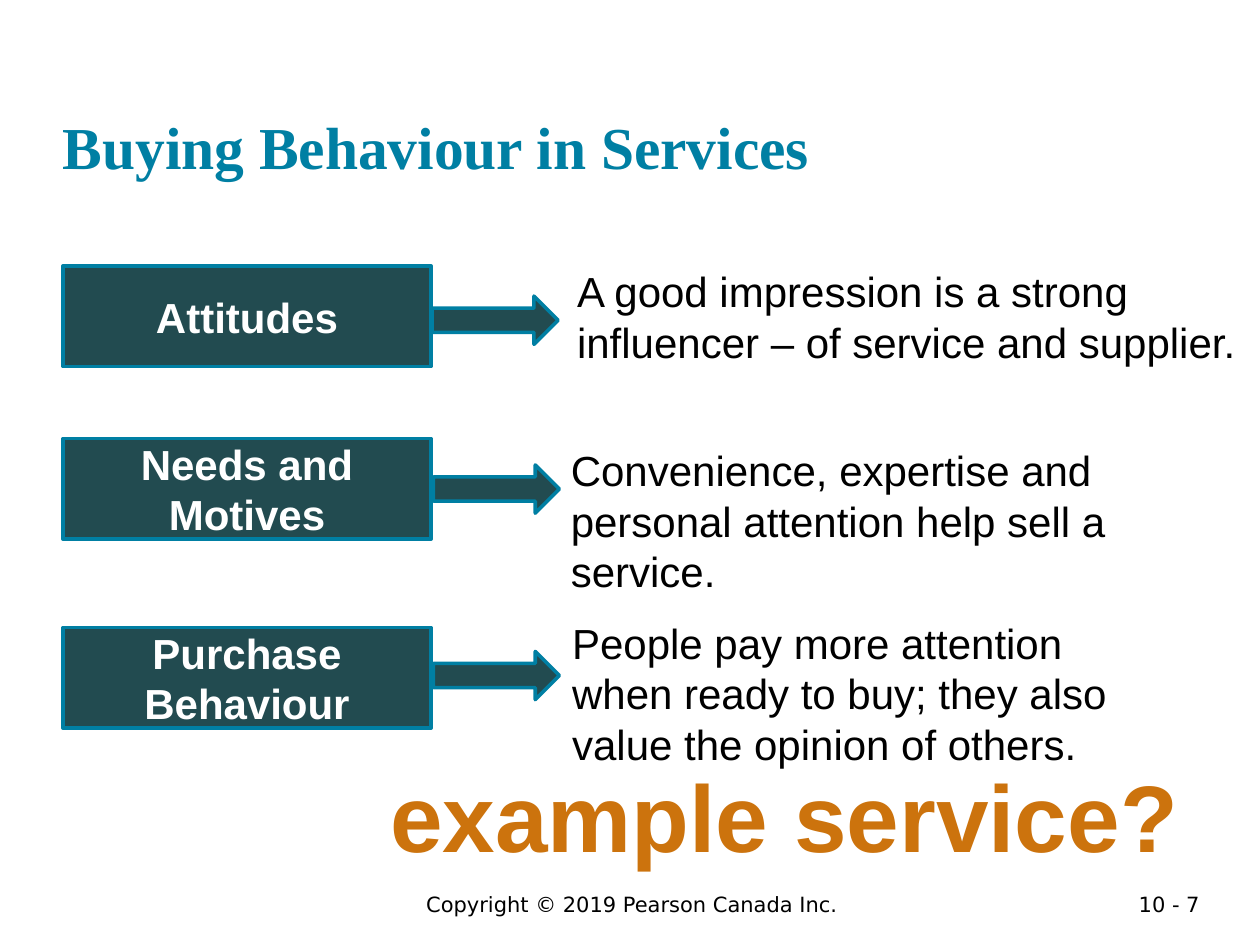
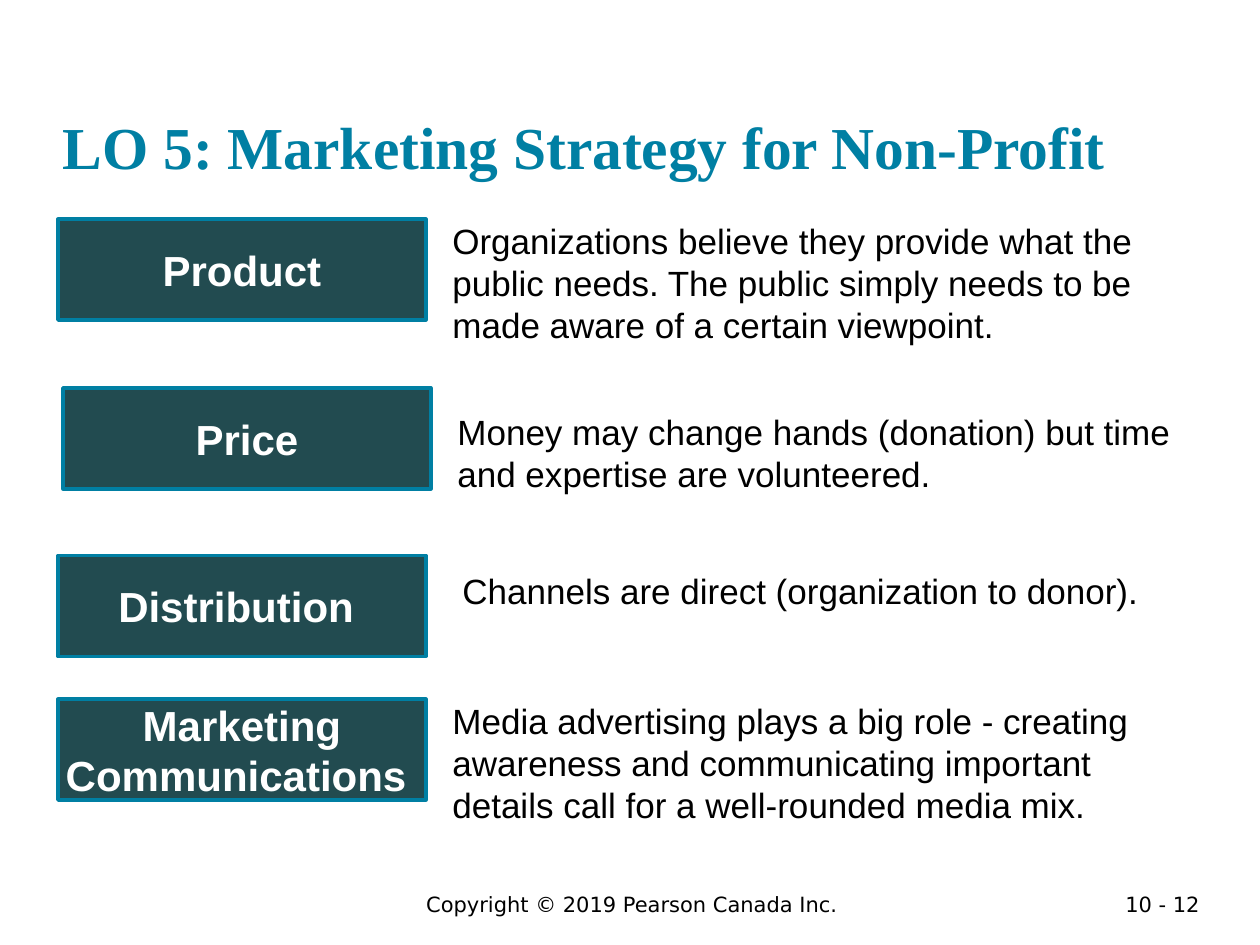
from pptx import Presentation
from pptx.dml.color import RGBColor
from pptx.enum.shapes import MSO_SHAPE
from pptx.enum.text import MSO_ANCHOR, PP_ALIGN
from pptx.util import Pt

COLOURS = {
    "title": "007FA3",
    "box": "224B50",
    "outline": "007FA3",
    "label": "FFFFFF",
    "body": "000000",
    "question": "CC730D",
}
LABEL_WIDTH, LABEL_HEIGHT = 210.24, 57.6
ARROW_WIDTH, ARROW_HEIGHT = 72, 27.6
COPYRIGHT = "Copyright © 2019 Pearson Canada Inc."

BUYING_FACTORS = [
    ("Attitudes", 151.92, (246.96, 169.2),
     "A good impression is a strong influencer – of service and supplier.",
     (329.76, 151.92, 390.24, 77.76)),
    ("Needs and\nMotives", 250.56, (247.68, 265.68),
     "Convenience, expertise and personal attention help sell a service.",
     (326.16, 254.16, 375.84, 57.6)),
    ("Purchase\nBehaviour", 358.56, (247.68, 372.24),
     "People pay more attention when ready to buy; they also value the opinion of others.",
     (326.88, 352.8, 329.76, 81.36)),
]
STRATEGY_ELEMENTS = [
    ("Product", (33.12, 125.28),
     "Organizations believe they provide what the public needs. "
     "The public simply needs to be made aware of a certain viewpoint.",
     (258.48, 125.28, 426.24, 95.76)),
    ("Price", (36, 221.76),
     "Money may change hands (donation) but time and expertise are volunteered.",
     (261.36, 234.72, 425.52, 57.6)),
    ("Distribution ", (33.12, 317.52),
     "Channels are direct (organization to donor).",
     (264.24, 325.44, 419.76, 41.76)),
    ("Marketing\nCommunications ", (33.12, 399.6),
     "Media advertising plays a big role - creating awareness and "
     "communicating important details call for a well-rounded media mix.",
     (258.48, 399.6, 414, 87.84)),
]


def colour(name):
    return RGBColor.from_string(COLOURS[name])


def write(frame, text, size, ink="body", font="Arial", bold=False,
          align=PP_ALIGN.LEFT, anchor=MSO_ANCHOR.TOP, inset=True):
    frame.word_wrap = True
    frame.vertical_anchor = anchor
    if not inset:
        frame.margin_left = frame.margin_right = 0
        frame.margin_top = frame.margin_bottom = 0
    frame.text = text
    for paragraph in frame.paragraphs:
        paragraph.alignment = align
        for run in paragraph.runs:
            run.font.name = font
            run.font.size = Pt(size)
            run.font.bold = bold
            run.font.color.rgb = colour(ink)


def add_text(slide, area, text, size, **style):
    box = slide.shapes.add_textbox(*map(Pt, area))
    write(box.text_frame, text, size, **style)


def add_block(slide, kind, area):
    block = slide.shapes.add_shape(kind, *map(Pt, area))
    block.shadow.inherit = False
    block.fill.solid()
    block.fill.fore_color.rgb = colour("box")
    block.line.color.rgb = colour("outline")
    block.line.width = Pt(2)
    return block


def add_label(slide, left, top, text):
    block = add_block(slide, MSO_SHAPE.RECTANGLE, (left, top, LABEL_WIDTH, LABEL_HEIGHT))
    write(block.text_frame, text, 24, ink="label", bold=True, align=PP_ALIGN.CENTER,
          anchor=MSO_ANCHOR.MIDDLE, inset=False)


def add_arrow(slide, left, top):
    add_block(slide, MSO_SHAPE.RIGHT_ARROW, (left, top, ARROW_WIDTH, ARROW_HEIGHT))


def add_titled_slide(deck, title, number):
    slide = deck.slides.add_slide(deck.slide_layouts[6])
    add_text(slide, (118.08, 506.16, 486, 21.6), COPYRIGHT, 12,
             font="DejaVu Sans", align=PP_ALIGN.CENTER)
    add_text(slide, (620.64, 506.16, 72, 15.84), f"10 - {number}", 12,
             font="DejaVu Sans", align=PP_ALIGN.RIGHT)
    add_text(slide, (36, 17.28, 648, 86.4), title, 34, ink="title",
             font="Times New Roman", bold=True, anchor=MSO_ANCHOR.BOTTOM, inset=False)
    return slide


def add_buying_behaviour(deck):
    slide = add_titled_slide(deck, "Buying Behaviour in Services", 7)
    for factor, top, arrow, explanation, area in BUYING_FACTORS:
        add_label(slide, 36, top, factor)
        add_arrow(slide, *arrow)
        add_text(slide, area, explanation, 24, inset=False)
    add_text(slide, (213.12, 429.84, 470.16, 72.72), "example service?", 54,
             ink="question", bold=True, align=PP_ALIGN.CENTER)


def add_non_profit_strategy(deck):
    slide = add_titled_slide(deck, "LO 5: Marketing Strategy for Non-Profit", 12)
    for element, corner, explanation, area in STRATEGY_ELEMENTS:
        add_label(slide, *corner, element)
        add_text(slide, area, explanation, 20, inset=False)


def main():
    deck = Presentation()
    deck.slide_width, deck.slide_height = Pt(720), Pt(540)
    add_buying_behaviour(deck)
    add_non_profit_strategy(deck)
    deck.save("out.pptx")


if __name__ == "__main__":
    main()
